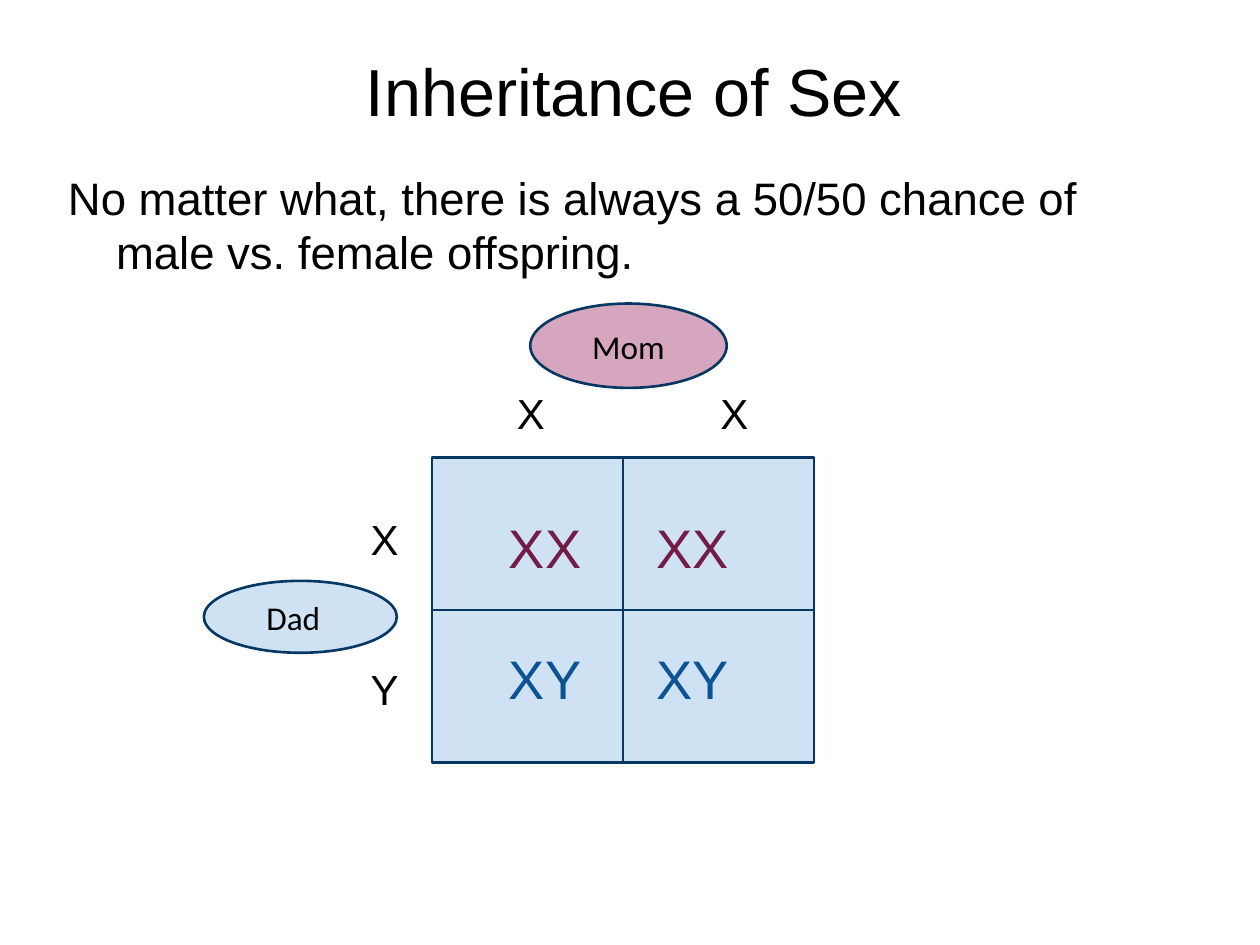
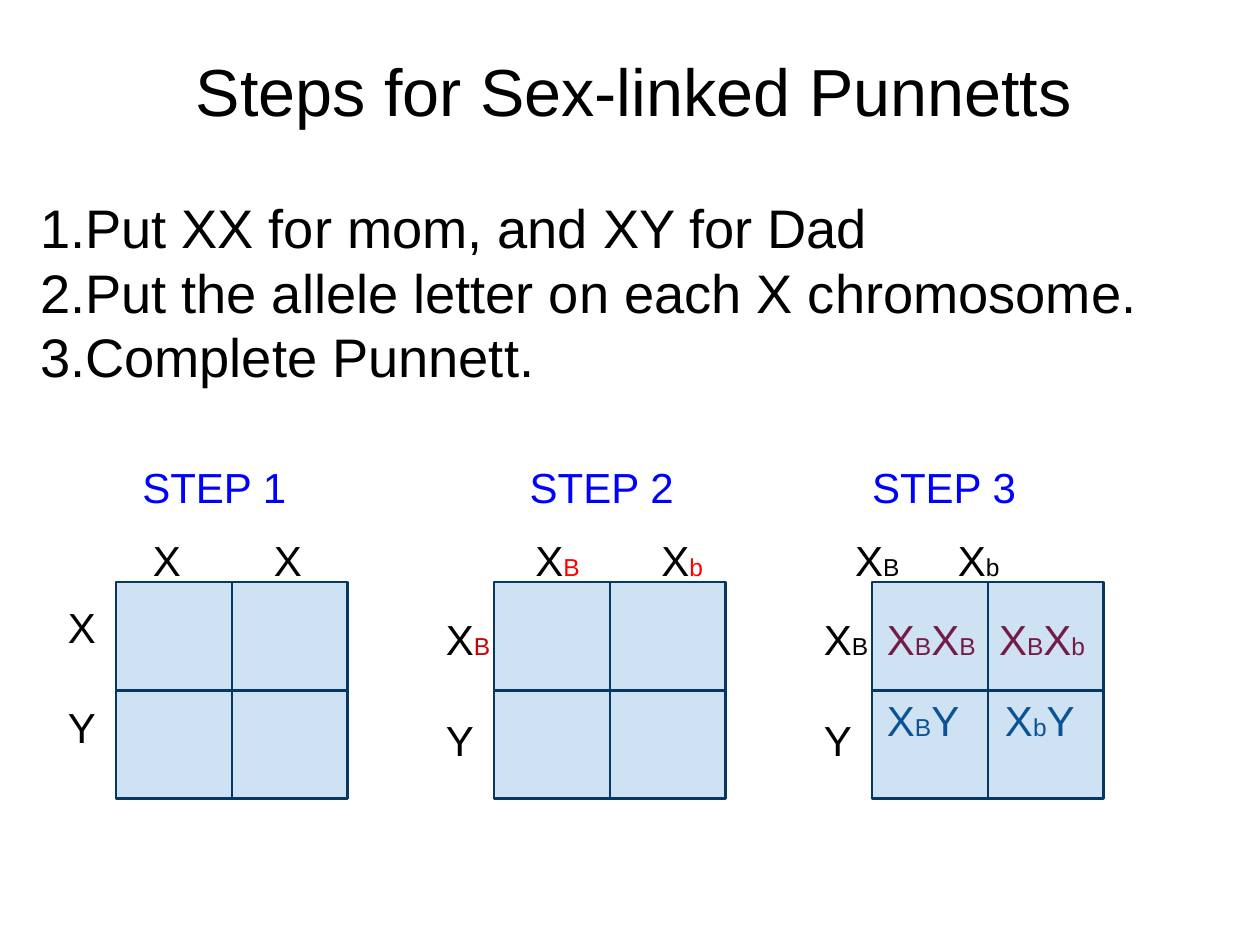
from dataclasses import dataclass
from itertools import groupby, product

from lxml import etree
from pptx import Presentation
from pptx.dml.color import RGBColor
from pptx.enum.shapes import MSO_CONNECTOR, MSO_SHAPE
from pptx.enum.text import MSO_ANCHOR, PP_ALIGN
from pptx.oxml.ns import qn
from pptx.util import Cm, Pt

RECT, OVAL = MSO_SHAPE.RECTANGLE, MSO_SHAPE.OVAL
LINE = MSO_CONNECTOR.STRAIGHT
MID, TOP = MSO_ANCHOR.MIDDLE, MSO_ANCHOR.TOP
LEFT, CENTER = PP_ALIGN.LEFT, PP_ALIGN.CENTER

INK = {
    "black": "000000", "navy": "073763", "sky": "CFE2F3", "pink": "D5A6BD",
    "plum": "741B47", "blue": "0B5394", "step": "0000FF",
    "red": "FF0000", "brick": "CC0000",
}
PT_CM = 2.54 / 72
ASCENT = 0.905
SMALL = 14


@dataclass(frozen=True)
class Box:
    x: float
    y: float
    w: float
    h: float


@dataclass(frozen=True)
class Label:
    text: str
    x: float
    base: float
    ink: str = "black"
    size: int = 24
    mark: str = ""


@dataclass(frozen=True)
class Parent:
    name: str
    box: Box
    fill: str
    right: float = 0


def tint(color: str) -> RGBColor:
    return RGBColor.from_string(INK[color])


def add_run(para, text: str, size: int, ink: str = "black", face: str = "Arial") -> None:
    run = para.add_run()
    run.text = text
    run.font.size = Pt(size)
    run.font.name = face
    run.font.color.rgb = tint(ink)


def bare_frame(shape, anchor=TOP):
    """Return the text frame, wrapped and without margins."""
    frame = shape.text_frame
    frame.word_wrap = True
    frame.vertical_anchor = anchor
    frame.margin_left = frame.margin_right = 0
    frame.margin_top = frame.margin_bottom = 0
    return frame


def add_frame(slide, box: Box):
    return bare_frame(slide.shapes.add_textbox(
        Cm(box.x), Cm(box.y), Cm(box.w), Cm(box.h)))


def add_title(slide, text: str) -> None:
    para = add_frame(slide, Box(0.76, 1.0, 24.05, 1.8)).paragraphs[0]
    para.alignment = CENTER
    add_run(para, text, 38)


def add_body(slide, box: Box, lines: list[str], size: int, pitch: int,
             hang: float, count: bool = False) -> None:
    """Add hanging paragraphs, numbered if count is set."""
    frame = add_frame(slide, box)
    for i, text in enumerate(lines):
        para = frame.paragraphs[0] if i == 0 else frame.add_paragraph()
        para.alignment = LEFT
        para.line_spacing = Pt(pitch)
        props = para._p.get_or_add_pPr()
        props.set("marL", str(Cm(hang)))
        props.set("indent", str(-Cm(hang)))
        if count:
            font = etree.SubElement(props, qn("a:buFont"))
            font.set("typeface", "Arial")
            num = etree.SubElement(props, qn("a:buAutoNum"))
            num.set("type", "arabicPeriod")
        add_run(para, text, size)


def add_label(slide, item: Label) -> None:
    """Set text on its baseline, with the allele letters B and b small."""
    em = item.size * PT_CM
    box = Box(item.x, item.base - ASCENT * em, 0.8 * em * len(item.text), 1.2 * em)
    para = add_frame(slide, box).paragraphs[0]
    for small, part in groupby(item.text, key=lambda sign: sign in "Bb"):
        ink = item.mark if small and item.mark else item.ink
        add_run(para, "".join(part), SMALL if small else item.size, ink)


def add_shape(slide, kind, box: Box, fill: str):
    shape = slide.shapes.add_shape(kind, Cm(box.x), Cm(box.y), Cm(box.w), Cm(box.h))
    shape.shadow.inherit = False
    shape.fill.solid()
    shape.fill.fore_color.rgb = tint(fill)
    shape.line.color.rgb = tint("navy")
    shape.line.width = Pt(1.5)
    return shape


def add_line(slide, x1: float, y1: float, x2: float, y2: float) -> None:
    line = slide.shapes.add_connector(LINE, Cm(x1), Cm(y1), Cm(x2), Cm(y2))
    line.line.color.rgb = tint("navy")
    line.line.width = Pt(1.5)
    etree.SubElement(line._element.spPr, qn("a:effectLst"))


def add_square(slide, box: Box) -> None:
    """Draw an empty two by two Punnett square."""
    add_shape(slide, RECT, box, "sky")
    mid_x, mid_y = box.x + box.w / 2, box.y + box.h / 2
    add_line(slide, mid_x, box.y, mid_x, box.y + box.h)
    add_line(slide, box.x, mid_y, box.x + box.w, mid_y)


def add_parent(slide, item: Parent) -> None:
    frame = bare_frame(add_shape(slide, OVAL, item.box, item.fill), MID)
    frame.margin_right = Cm(item.right)
    para = frame.paragraphs[0]
    para.alignment = CENTER
    add_run(para, item.name, 19, face="Calibri")


def build_sex(slide) -> None:
    add_title(slide, "Inheritance of Sex")
    add_body(slide, Box(1.37, 3.43, 22.12, 2.4),
             ["No matter what, there is always a 50/50 chance of "
              "male vs. female offspring."], 26, 31, 0.97)
    add_square(slide, Box(8.71, 9.22, 7.7, 6.15))
    rows = [("XX", 11.35, "plum"), ("XY", 13.99, "blue")]
    for (text, base, ink), x in product(rows, (10.26, 13.24)):
        add_label(slide, Label(text, x, base, ink, 31))
    for x in (10.42, 14.52):
        add_label(slide, Label("X", x, 8.57))
    for text, base in (("X", 11.11), ("Y", 14.15)):
        add_label(slide, Label(text, 7.47, base))
    for item in (Parent("Mom", Box(10.69, 6.12, 3.96, 1.7), "pink"),
                 Parent("Dad", Box(4.11, 11.71, 3.89, 1.45), "sky", 0.28)):
        add_parent(slide, item)


def build_steps(slide) -> None:
    add_title(slide, "Steps for Sex-linked Punnetts")
    add_body(slide, Box(0.81, 3.92, 24, 4),
             ["Put XX for mom, and XY for Dad",
              "Put the allele letter on each X chromosome.",
              "Complete Punnett."], 31, 37, 0.69, count=True)
    pitch, head, side = 7.62, 11.54, 1.37
    for i in range(3):
        add_square(slide, Box(2.34 + i * pitch, 11.73, 4.67, 4.37))
    for i, x in enumerate((2.87, 10.68, 17.58), 1):
        add_label(slide, Label(f"STEP {i}", x, 10.07, "step"))
    labels = [
        Label("X", 3.08, head), Label("X", 5.52, head),
        Label("XB", 10.79, head, mark="red"), Label("Xb", 13.33, head, mark="red"),
        Label("XB", 17.24, head), Label("Xb", 19.31, head),
        Label("X", side, 12.89), Label("Y", side, 14.9),
        Label("XB", side + pitch, 13.14, mark="brick"),
        Label("Y", side + pitch, 15.16),
        Label("XB", side + 2 * pitch, 13.14), Label("Y", side + 2 * pitch, 15.16),
        Label("XBXB", 17.88, 13.14, "plum"), Label("XBXb", 20.14, 13.14, "plum"),
        Label("XBY", 17.88, 14.76, "blue"), Label("XbY", 20.26, 14.76, "blue"),
    ]
    for item in labels:
        add_label(slide, item)


def main() -> None:
    deck = Presentation()
    deck.slide_width, deck.slide_height = Cm(25.4), Cm(19.05)
    blank = deck.slide_layouts[6]
    for build in (build_sex, build_steps):
        build(deck.slides.add_slide(blank))
    deck.save("out.pptx")


if __name__ == "__main__":
    main()
